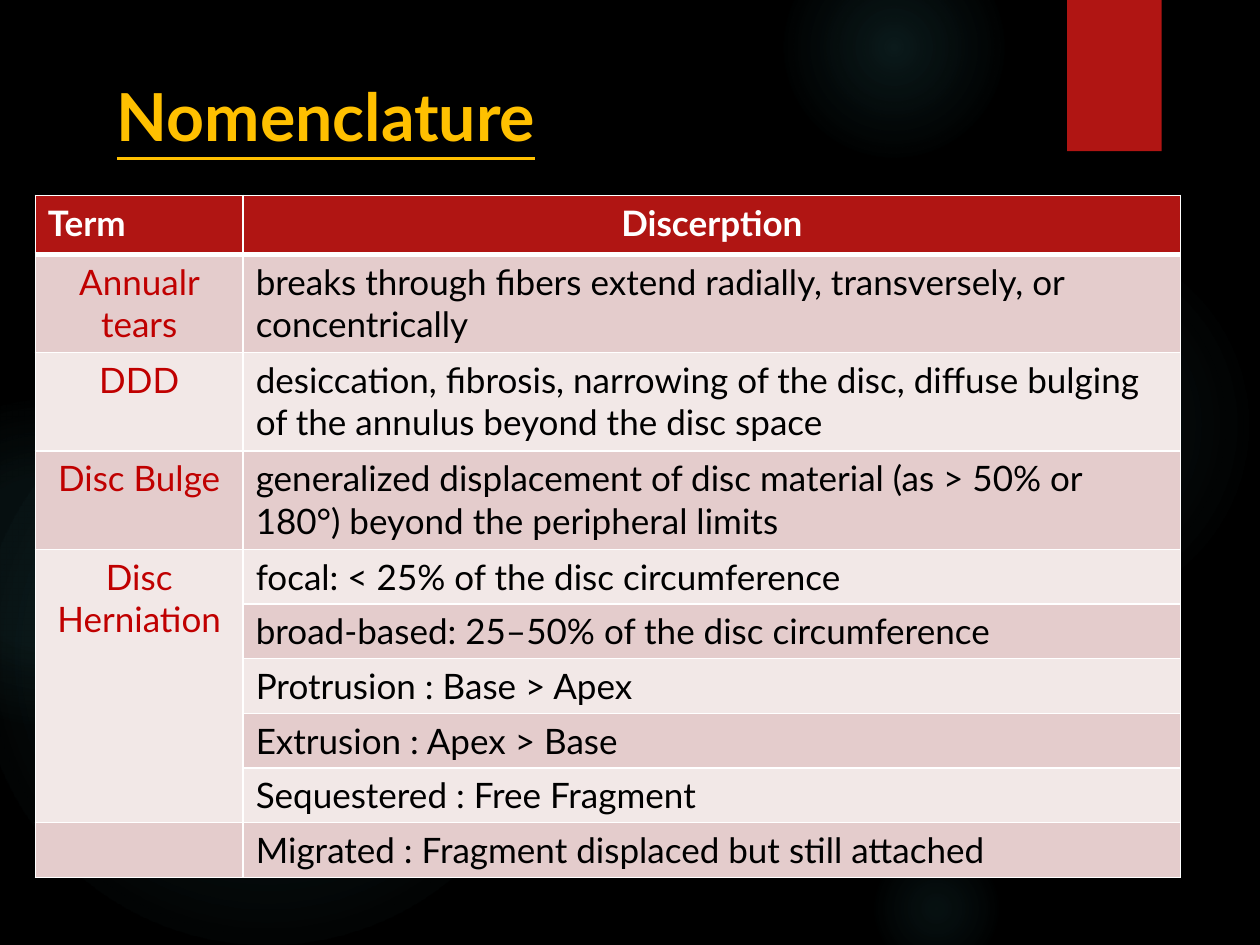
from lxml import etree
from pptx import Presentation
from pptx import util as u
from pptx.dml.color import RGBColor
from pptx.enum import shapes, text
from pptx.oxml import parse_xml
from pptx.oxml.ns import nsdecls, qn

FONT = "Lato"
BLACK, WHITE, RED, TERM_RED, GOLD, TEAL = (
    "000000", "FFFFFF", "B01513", "C00000", "FFC000", "50B9C1")
BANDS = ["E4CCCC", "F2E8E7"]

# left, top, diameter, then (position %, opacity %) from the centre outwards
GLOWS = [
    (6.89, 1.83, 3.08, [(0, 7), (36, 6), (69, 0)]),
    (6.22, -0.5, 1.75, [(0, 14), (36, 7), (73, 0)]),
    (6.89, 6.67, 1.08, [(0, 9), (36, 5), (66, 0)]),
    (-0.17, 2.92, 4.58, [(0, 11), (36, 10), (75, 0)]),
    (-0.92, 3.17, 2.58, [(0, 8), (36, 8), (72, 0)]),
]

HEADER = ("Term", "Discerption")
TERMS = [
    ("Annualr tears", ["breaks through fibers extend radially, transversely, or concentrically"]),
    ("DDD", ["desiccation, fibrosis, narrowing of the disc, diffuse bulging of the annulus "
             "beyond the disc space"]),
    ("Disc Bulge", ["generalized displacement of disc material (as > 50% or 180°) beyond "
                    "the peripheral limits"]),
    ("Disc Herniation", ["focal: < 25% of the disc circumference",
                         "broad-based: 25–50% of the disc circumference",
                         "Protrusion : Base > Apex",
                         "Extrusion : Apex > Base",
                         "Sequestered : Free Fragment"]),
    ("", ["Migrated : Fragment displaced but still attached"]),
]
COLUMNS = [1.65, 7.44]
HEADER_HEIGHT, TWO_LINES, ONE_LINE = 0.47, 0.78, 0.43
LONG_TEXT = 60  # characters that fit on one line of a description


def colour(value):
    return RGBColor.from_string(value)


def inches(*values):
    return [u.Inches(v) for v in values]


def paint(target, value):
    target.fill.solid()
    target.fill.fore_color.rgb = colour(value)


def style(font, value, **formats):
    font.color.rgb = colour(value)
    for key, setting in {"name": FONT, **formats}.items():
        setattr(font, key, setting)


def add_plain(slide, kind, *box):
    shape = slide.shapes.add_shape(kind, *inches(*box))
    shape.shadow.inherit = False
    shape.line.fill.background()
    return shape


def add_glow(slide, left, top, size, stops):
    glow = add_plain(slide, shapes.MSO_SHAPE.OVAL, left, top, size, size)
    marks = "".join(
        f'<a:gs pos="{pos * 1000}"><a:srgbClr val="{TEAL}">'
        f'<a:alpha val="{alpha * 1000}"/></a:srgbClr></a:gs>' for pos, alpha in stops)
    gradient = parse_xml(
        f'<a:gradFill {nsdecls("a")}><a:gsLst>{marks}</a:gsLst><a:path path="circle">'
        '<a:fillToRect l="50000" t="50000" r="50000" b="50000"/></a:path></a:gradFill>')
    glow._element.spPr.find(qn("a:prstGeom")).addnext(gradient)


def add_ribbon(slide):
    ribbon = add_plain(slide, shapes.MSO_SHAPE.RECTANGLE, 8.47, 0, 0.75, 1.2)
    paint(ribbon, RED)
    ribbon._element.spPr.find(qn("a:effectLst")).append(parse_xml(
        f'<a:outerShdw {nsdecls("a")} blurRad="38100" dist="25400" dir="5400000">'
        f'<a:srgbClr val="{BLACK}"><a:alpha val="45000"/></a:srgbClr></a:outerShdw>'))


def add_title(slide):
    """The underline runs on past the word to a tab stop."""
    title = slide.shapes.add_textbox(*inches(0.83, 0.55, 7.72, 0.72)).text_frame
    title.word_wrap = True
    line = title.paragraphs[0]
    tabs = etree.SubElement(line._p.get_or_add_pPr(), qn("a:tabLst"))
    etree.SubElement(tabs, qn("a:tab"), pos=str(u.Inches(3.57)), algn="l")
    run = line.add_run()
    run.text = "Nomenclature\t"
    style(run.font, GOLD, size=u.Pt(37.8), bold=True, underline=True)


def set_borders(cell, bottom):
    widths = {"lnL": 1, "lnR": 1, "lnT": 1, "lnB": bottom}
    for place, (side, width) in enumerate(widths.items()):
        cell._tc.get_or_add_tcPr().insert(place, parse_xml(
            f'<a:{side} {nsdecls("a")} w="{u.Pt(width)}"><a:solidFill>'
            f'<a:srgbClr val="{WHITE}"/></a:solidFill></a:{side}>'))


def fill_cell(cell, words, fill, ink, centred, bold=False, bottom=1):
    paint(cell, fill)
    set_borders(cell, bottom)
    cell.text = words
    line = cell.text_frame.paragraphs[0]
    line.alignment = text.PP_ALIGN.CENTER if centred else text.PP_ALIGN.LEFT
    style(line.font, ink, size=u.Pt(20), bold=bold)
    for run in line.runs:
        style(run.font, ink, size=u.Pt(20), bold=bold)


def add_terms(slide):
    descriptions = [d for _, group in TERMS for d in group]
    heights = [HEADER_HEIGHT] + [
        TWO_LINES if len(d) > LONG_TEXT else ONE_LINE for d in descriptions]
    table = slide.shapes.add_table(
        len(heights), len(COLUMNS),
        *inches(0.28, 1.55, sum(COLUMNS), sum(heights))).table
    for column, width in zip(table.columns, COLUMNS):
        column.width = u.Inches(width)
    for row, height in zip(table.rows, heights):
        row.height = u.Inches(height)

    for col, heading in enumerate(HEADER):
        fill_cell(table.cell(0, col), heading, RED, WHITE, col == 1, bold=True, bottom=3)
    row = 1
    for term, group in TERMS:
        first = row
        for description in group:
            band = BANDS[(row - 1) % 2]
            fill_cell(table.cell(row, 0), term if row == first else "", band, TERM_RED, True)
            fill_cell(table.cell(row, 1), description, band, BLACK, False)
            row += 1
        if len(group) > 1:
            table.cell(first, 0).merge(table.cell(row - 1, 0))


def main():
    deck = Presentation()
    deck.slide_width, deck.slide_height = inches(10, 7.5)
    slide = deck.slides.add_slide(deck.slide_layouts[6])
    paint(slide.background, BLACK)
    for glow in GLOWS:
        add_glow(slide, *glow)
    add_ribbon(slide)
    add_title(slide)
    add_terms(slide)
    deck.save("out.pptx")


if __name__ == "__main__":
    main()
